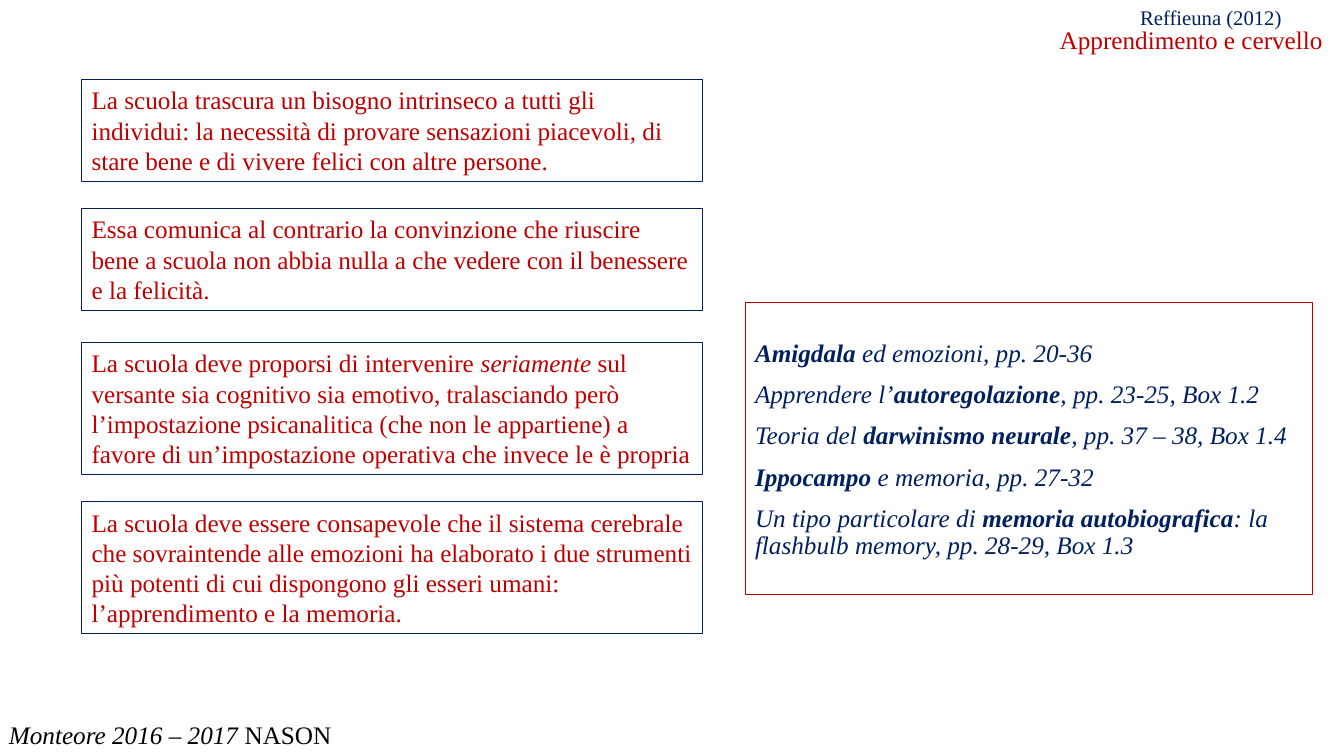
from dataclasses import dataclass

from pptx import Presentation
from pptx.dml.color import RGBColor
from pptx.enum import shapes, text
from pptx.util import Inches, Pt

COLORS = {"navy": "002060", "red": "C00000", "black": "000000"}
FONT = "Times New Roman"


@dataclass(frozen=True)
class Run:
    text: str
    bold: bool = False
    italic: bool = False


@dataclass(frozen=True)
class Para:
    runs: tuple[Run, ...]
    line_spacing: float = 1.0
    before: float = 0


@dataclass(frozen=True)
class Block:
    left: float
    top: float
    width: float
    height: float
    paras: tuple[Para, ...]
    color: str
    size: float = 18
    border: str = ""
    inset_top: float = 0.05


def plain(*runs: Run) -> tuple[Para, ...]:
    return (Para(runs),)


def topic(*runs: Run) -> Para:
    return Para(runs, 0.9, 10)


def bold(words: str) -> Run:
    return Run(words, bold=True, italic=True)


def slanted(words: str) -> Run:
    return Run(words, italic=True)


def rgb(name: str) -> RGBColor:
    return RGBColor.from_string(COLORS[name])


def write(sp, block: Block) -> None:
    """Place a shape and fill it with formatted text."""
    for side in ("left", "top", "width", "height"):
        setattr(sp, side, Inches(getattr(block, side)))
    tf = sp.text_frame
    frame = {
        "word_wrap": True,
        "auto_size": text.MSO_AUTO_SIZE.NONE,
        "vertical_anchor": text.MSO_ANCHOR.TOP,
        "margin_left": Inches(0.1),
        "margin_right": Inches(0.1),
        "margin_top": Inches(block.inset_top),
        "margin_bottom": Inches(0.05),
    }
    for name, value in frame.items():
        setattr(tf, name, value)
    for i, para in enumerate(block.paras):
        p = tf.add_paragraph() if i else tf.paragraphs[0]
        layout = {
            "alignment": text.PP_ALIGN.LEFT,
            "line_spacing": para.line_spacing,
            "space_before": Pt(para.before),
        }
        for name, value in layout.items():
            setattr(p, name, value)
        for run in para.runs:
            r = p.add_run()
            r.text = run.text
            style = {"name": FONT, "size": Pt(block.size),
                     "bold": run.bold, "italic": run.italic}
            for name, value in style.items():
                setattr(r.font, name, value)
            r.font.color.rgb = rgb(block.color)


def add_block(s, block: Block) -> None:
    """Draw a framed box, or a bare text box when there is no border."""
    area = [Inches(v) for v in (block.left, block.top, block.width, block.height)]
    if block.border:
        sp = s.shapes.add_shape(shapes.MSO_SHAPE.RECTANGLE, *area)
        sp.shadow.inherit = False
        sp.fill.background()
        sp.line.color.rgb = rgb(block.border)
        sp.line.width = Pt(0.75)
    else:
        sp = s.shapes.add_textbox(*area)
    write(sp, block)


def statement(top: float, height: float, *runs: Run) -> Block:
    return Block(0.81, top, 6.16, height, plain(*runs), "red", border="navy")


TITLE = Block(10.41, 0.22, 2.92, 0.37,
              (topic(Run("Apprendimento e cervello")),), "red")

BLOCKS = (
    # Source and footer
    Block(11.21, 0.05, 2.24, 0.31,
          (Para((Run("Reffieuna (2012)"),), 0.8, 10),), "navy", size=14.8),
    Block(-0.01, 7.09, 3.63, 0.4,
          plain(slanted("Monteore 2016 – 2017 "), Run("NASON")), "black"),
    # Statements about school
    statement(0.79, 1.01, Run(
        "La scuola trascura un bisogno intrinseco a tutti gli individui: la "
        "necessità di provare sensazioni piacevoli, di stare bene e di vivere "
        "felici con altre persone.")),
    statement(2.07, 1.01, Run(
        "Essa comunica al contrario la convinzione che riuscire bene a scuola "
        "non abbia nulla a che vedere con il benessere e la felicità.")),
    statement(
        3.4, 1.31,
        Run("La scuola deve proporsi di intervenire "),
        slanted("seriamente"),
        Run(" sul versante sia cognitivo sia emotivo, tralasciando però "
            "l’impostazione psicanalitica (che non le appartiene) a favore di "
            "un’impostazione operativa che invece le è propria")),
    statement(4.98, 1.31, Run(
        "La scuola deve essere consapevole che il sistema cerebrale che "
        "sovraintende alle emozioni ha elaborato i due strumenti più potenti "
        "di cui dispongono gli esseri umani: l’apprendimento e la memoria.")),
    # Reading list
    Block(7.39, 3, 5.63, 2.9, (
        Para((bold("Amigdala"), slanted(" ed emozioni, pp. 20-36"))),
        topic(slanted("Apprendere l’"), bold("autoregolazione"),
              slanted(", pp. 23-25, Box 1.2")),
        topic(slanted("Teoria del "), bold("darwinismo neurale"),
              slanted(", pp. 37 – 38, Box 1.4")),
        topic(bold("Ippocampo "), slanted("e memoria, pp. 27-32")),
        topic(slanted("Un tipo particolare di "), bold("memoria autobiografica"),
              slanted(": la flashbulb memory, pp. 28-29, Box 1.3")),
    ), "navy", border="red", inset_top=0.35),
)


def main() -> None:
    prs = Presentation()
    prs.slide_width, prs.slide_height = Inches(13.33), Inches(7.5)
    s = prs.slides.add_slide(prs.slide_layouts[5])
    write(s.shapes.title, TITLE)
    for block in BLOCKS:
        add_block(s, block)
    prs.save("out.pptx")


if __name__ == "__main__":
    main()
